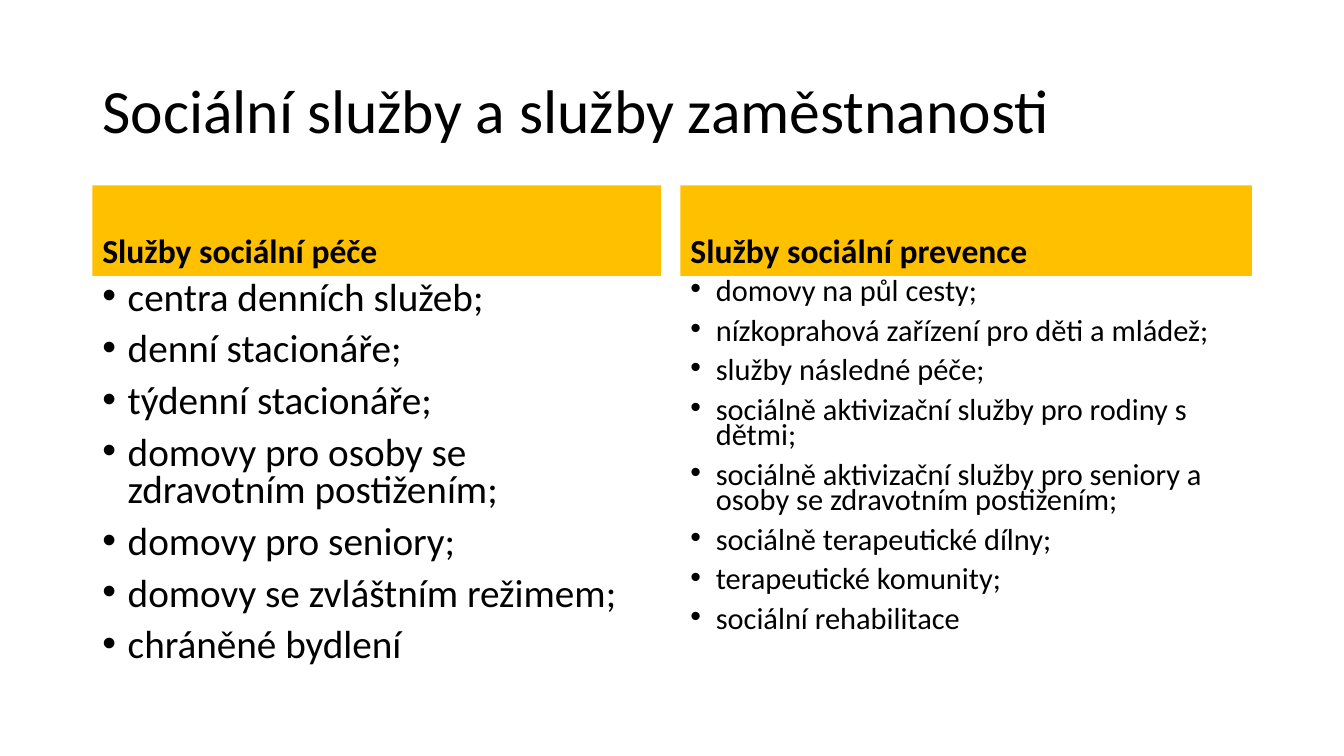
from dataclasses import dataclass

from lxml import etree
from pptx import Presentation
from pptx.dml.color import RGBColor
from pptx.enum import text
from pptx.oxml import ns
from pptx.util import Cm, Pt


@dataclass(frozen=True)
class Theme:
    font: str = "Calibri"
    ink: RGBColor = RGBColor(0, 0, 0)
    paper: RGBColor = RGBColor(255, 255, 255)
    gold: RGBColor = RGBColor(255, 192, 0)
    title: float = 44
    head: float = 24
    gap: float = 10


@dataclass(frozen=True)
class Box:
    left: float
    top: float
    width: float
    height: float


@dataclass(frozen=True)
class Style:
    size: float
    fill: RGBColor
    anchor: text.MSO_ANCHOR
    lead: float = 0.9
    bold: bool = False
    bullet: bool = False


@dataclass(frozen=True)
class Column:
    left: float
    width: float
    head: str
    items: tuple[str, ...]
    size: float
    lead: float


THEME = Theme()
TITLE = Style(THEME.title, THEME.paper, text.MSO_ANCHOR.MIDDLE)
HEAD = Style(THEME.head, THEME.gold, text.MSO_ANCHOR.BOTTOM, bold=True)
HEAD_TOP, HEAD_HIGH = 4.67, 2.29
LIST_HIGH = 10.24
INDENT = Cm(0.64)

COLUMNS = (
    Column(2.33, 14.33, "Služby sociální péče", (
        "centra denních služeb;",
        "denní stacionáře;",
        "týdenní stacionáře;",
        "domovy pro osoby se zdravotním postižením;",
        "domovy pro seniory;",
        "domovy se zvláštním režimem;",
        "chráněné bydlení",
    ), 28, 0.8),
    Column(17.15, 14.4, "Služby sociální prevence", (
        "domovy na půl cesty;",
        "nízkoprahová zařízení pro děti a mládež;",
        "služby následné péče;",
        "sociálně aktivizační služby pro rodiny s dětmi;",
        "sociálně aktivizační služby pro seniory a osoby se zdravotním postižením;",
        "sociálně terapeutické dílny;",
        "terapeutické komunity;",
        "sociální rehabilitace",
    ), 21.7, 0.7),
)


def add_bullet(para) -> None:
    props = para._p.get_or_add_pPr()
    props.set("marL", str(INDENT))
    props.set("indent", str(-INDENT))
    face = etree.SubElement(props, ns.qn("a:buFont"))
    face.set("typeface", "Arial")
    mark = etree.SubElement(props, ns.qn("a:buChar"))
    mark.set("char", "•")


def add_text(slide, box: Box, lines: tuple[str, ...], style: Style) -> None:
    shape = slide.shapes.add_textbox(
        Cm(box.left), Cm(box.top), Cm(box.width), Cm(box.height))
    shape.fill.solid()
    shape.fill.fore_color.rgb = style.fill
    frame = shape.text_frame
    frame.word_wrap = True
    frame.auto_size = text.MSO_AUTO_SIZE.NONE
    frame.vertical_anchor = style.anchor
    for row, line in enumerate(lines):
        para = frame.add_paragraph() if row else frame.paragraphs[0]
        para.text = line
        para.line_spacing = style.lead
        para.space_before = Pt(THEME.gap if row else 0)
        if style.bullet:
            add_bullet(para)
        para.font.name = THEME.font
        para.font.size = Pt(style.size)
        para.font.bold = style.bold
        para.font.color.rgb = THEME.ink


def add_column(slide, col: Column) -> None:
    head = Box(col.left, HEAD_TOP, col.width, HEAD_HIGH)
    body = Box(col.left, HEAD_TOP + HEAD_HIGH, col.width, LIST_HIGH)
    style = Style(col.size, THEME.paper, text.MSO_ANCHOR.TOP, col.lead,
                  bullet=True)
    add_text(slide, head, (col.head,), HEAD)
    add_text(slide, body, col.items, style)


def main() -> None:
    deck = Presentation()
    deck.slide_width, deck.slide_height = Cm(33.87), Cm(19.05)
    slide = deck.slides.add_slide(deck.slide_layouts[6])
    add_text(slide, Box(2.33, 1.01, 29.21, 3.68),
             ("Sociální služby a služby zaměstnanosti",), TITLE)
    for col in COLUMNS:
        add_column(slide, col)
    deck.save("out.pptx")


if __name__ == "__main__":
    main()
